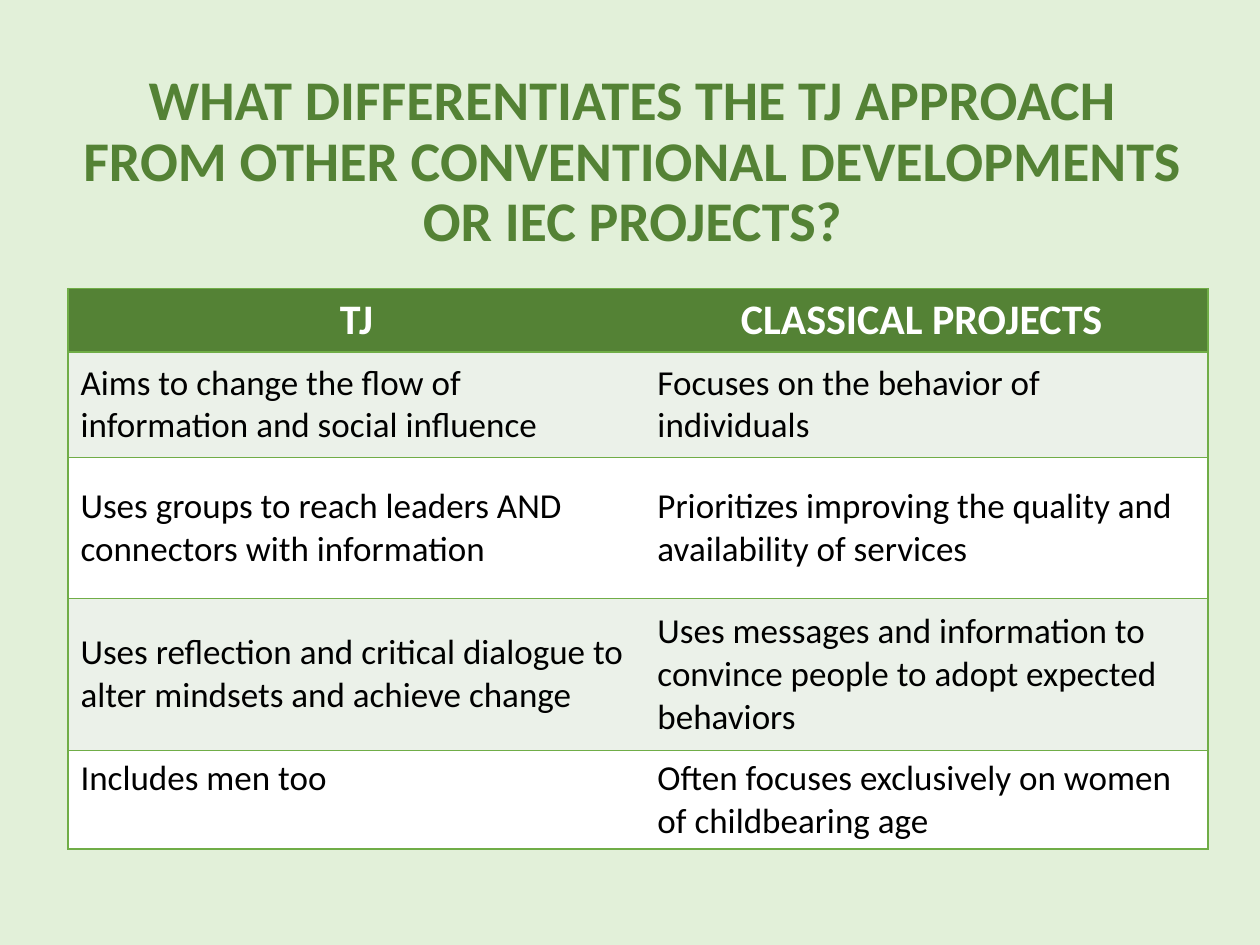
from lxml import etree
from pptx import Presentation
from pptx import util as u
from pptx.dml.color import RGBColor
from pptx.enum import text
from pptx.oxml.ns import qn

COLORS = {
    "background": "E2F0D9",
    "green": "548235",
    "border": "70AD47",
    "band": "EBF1E9",
    "white": "FFFFFF",
    "black": "000000",
}
TITLE = ("WHAT DIFFERENTIATES THE TJ APPROACH FROM OTHER CONVENTIONAL "
         "DEVELOPMENTS OR IEC PROJECTS?")
# Each cell is a list of paragraphs.
COMPARISON = [
    (["TJ"], ["CLASSICAL PROJECTS "]),
    (["Aims to change the flow of information and social influence"],
     ["Focuses on the behavior of individuals"]),
    (["Uses groups to reach leaders AND connectors with information"],
     ["Prioritizes improving the quality and availability of services"]),
    (["Uses reflection and critical dialogue to alter mindsets and achieve change"],
     ["Uses messages and information to convince people to adopt expected",
      "behaviors"]),
    (["Includes men too"],
     ["Often focuses exclusively on women of childbearing age"]),
]
COLUMN_WIDTHS = [11.63, 11.35]
ROW_HEIGHTS = [1.27, 2.13, 2.84, 3.07, 1.98]


def color(name):
    return RGBColor.from_string(COLORS[name])


class SlideBuilder:
    font = "Calibri"

    def __init__(self, slide):
        self.slide = slide

    def background(self, name):
        fill = self.slide.background.fill
        fill.solid()
        fill.fore_color.rgb = color(name)

    def add_lines(self, frame, lines, size, ink, bold=False,
                  align=text.PP_ALIGN.LEFT, spacing=1.0):
        for number, line in enumerate(lines):
            para = frame.add_paragraph() if number else frame.paragraphs[0]
            para.alignment = align
            para.line_spacing = spacing
            span = para.add_run()
            span.text = line
            span.font.name = self.font
            span.font.size = u.Pt(size)
            span.font.bold = bold
            span.font.color.rgb = color(ink)

    def title(self, words, left, top, width, height):
        box = self.slide.shapes.add_textbox(u.Cm(left), u.Cm(top), u.Cm(width), u.Cm(height))
        frame = box.text_frame
        frame.word_wrap = True
        frame.vertical_anchor = text.MSO_ANCHOR.MIDDLE
        self.add_lines(frame, [words], 32, "green", True, text.PP_ALIGN.CENTER, 0.9)

    def borders(self, cell, sides):
        """Draw the given sides (letters from LRTB) and clear the others."""
        properties = cell._tc.get_or_add_tcPr()
        for position, side in enumerate("LRTB"):
            line = etree.Element(qn(f"a:ln{side}"), w=str(u.Pt(1)))
            if side in sides:
                fill = etree.SubElement(line, qn("a:solidFill"))
                etree.SubElement(fill, qn("a:srgbClr"), val=COLORS["border"])
            else:
                etree.SubElement(line, qn("a:noFill"))
            properties.insert(position, line)

    def table(self, rows, left, top, widths, heights):
        table = self.slide.shapes.add_table(
            len(rows), len(widths), u.Cm(left), u.Cm(top),
            u.Cm(sum(widths)), u.Cm(sum(heights))).table
        for column, width in zip(table.columns, widths):
            column.width = u.Cm(width)
        for r, (row, height) in enumerate(zip(rows, heights)):
            table.rows[r].height = u.Cm(height)
            for c, lines in enumerate(row):
                cell = table.cell(r, c)
                cell.fill.solid()
                if r == 0:
                    cell.fill.fore_color.rgb = color("green")
                    self.add_lines(cell.text_frame, lines, 24, "white", True,
                                   text.PP_ALIGN.CENTER)
                else:
                    cell.fill.fore_color.rgb = color("band" if r % 2 else "white")
                    self.add_lines(cell.text_frame, lines, 20, "black")
                middle = 0 < r < len(rows) - 1
                cell.vertical_anchor = (text.MSO_ANCHOR.MIDDLE if middle
                                        else text.MSO_ANCHOR.TOP)
                self.borders(cell, "RTB" if c else "LTB")


def main():
    deck = Presentation()
    deck.slide_width, deck.slide_height = u.Cm(25.4), u.Cm(19.05)
    page = SlideBuilder(deck.slides.add_slide(deck.slide_layouts[6]))
    page.background("background")
    page.title(TITLE, 1.37, 1.12, 22.76, 4.34)
    page.table(COMPARISON, 1.37, 5.82, COLUMN_WIDTHS, ROW_HEIGHTS)
    deck.save("out.pptx")


if __name__ == "__main__":
    main()
